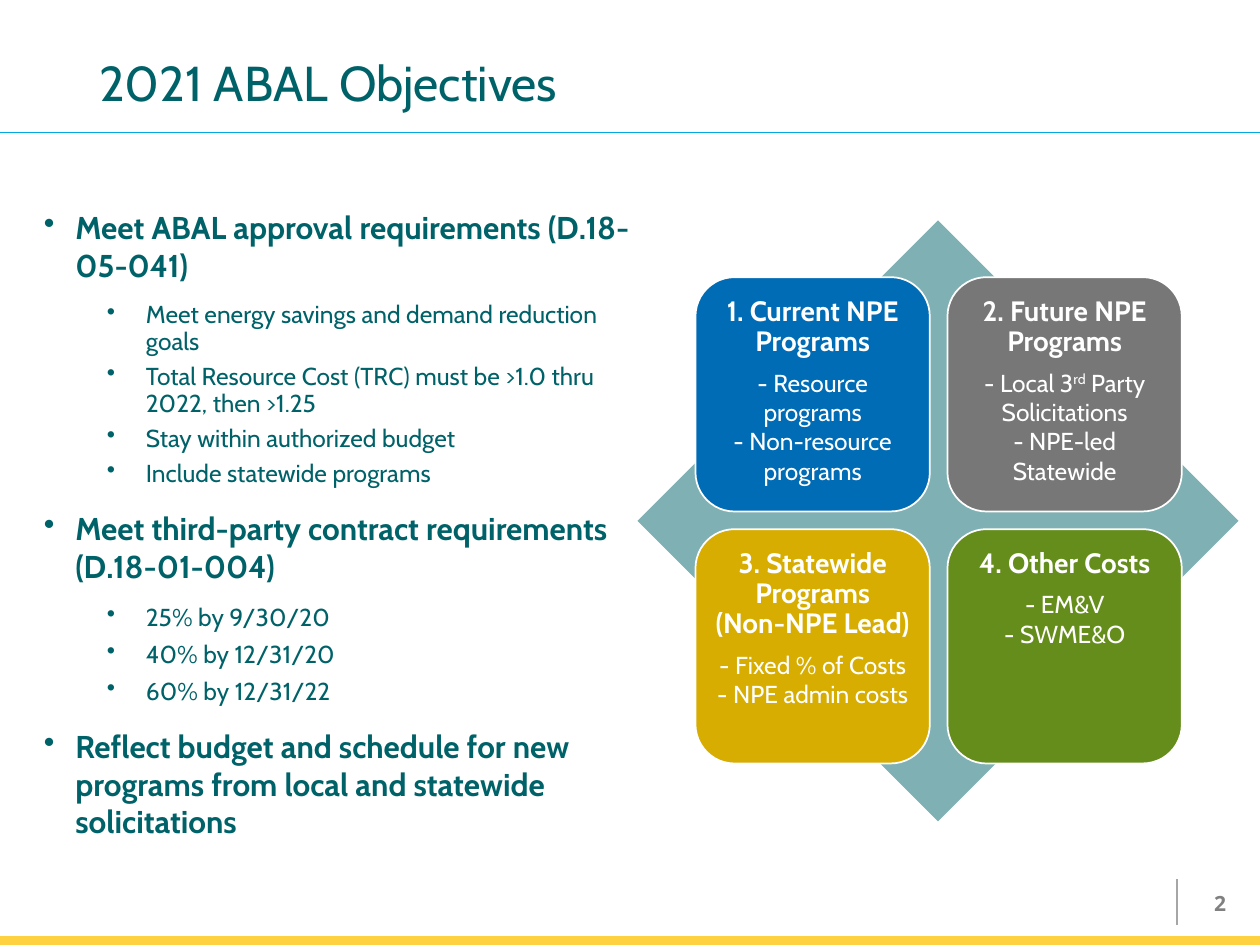
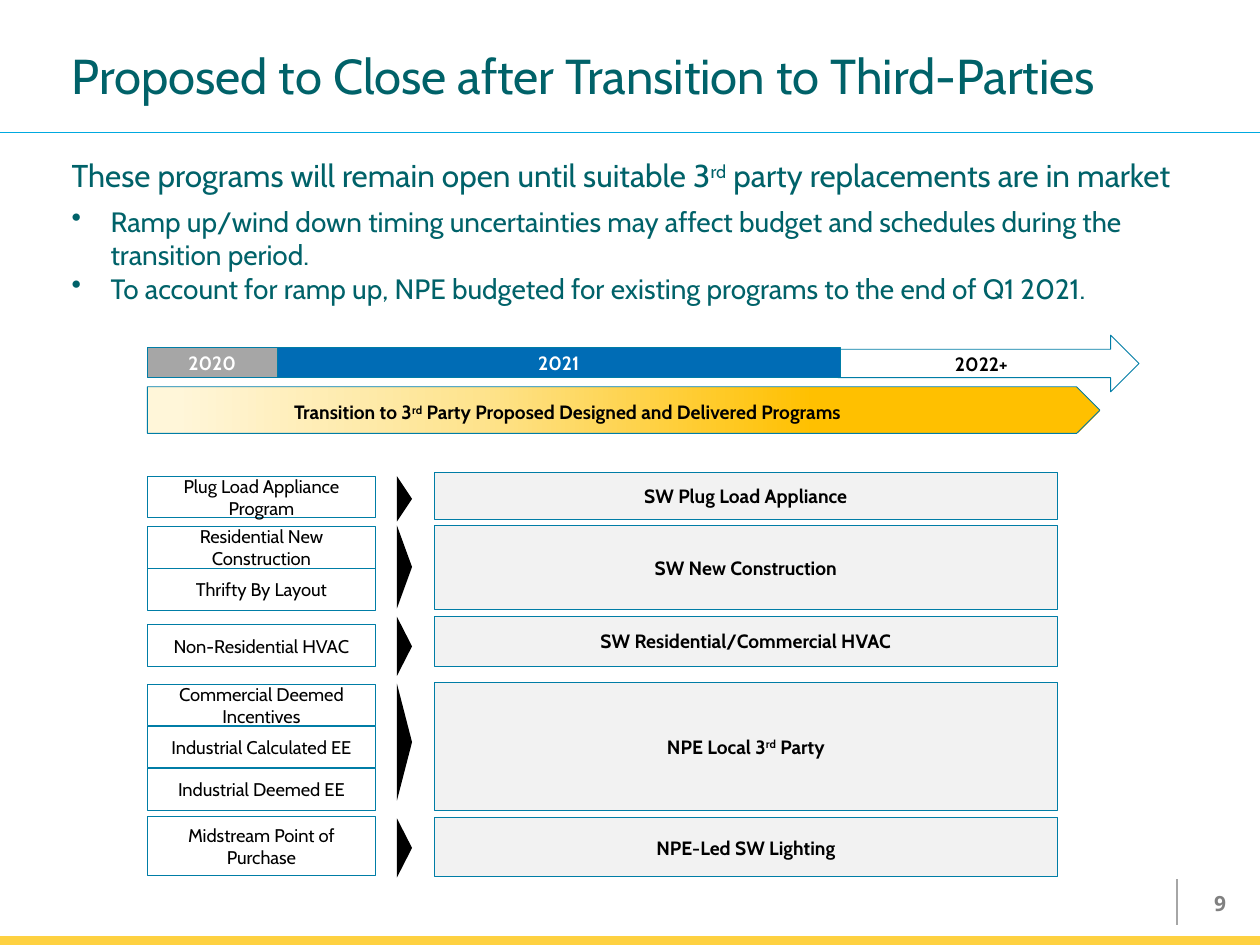
"""Build two slides on the 2021 ABAL objectives and the move to third-party programs."""
from dataclasses import dataclass, field

from lxml import etree
from pptx import Presentation
from pptx.dml.color import RGBColor
from pptx.enum.shapes import MSO_CONNECTOR, MSO_SHAPE
from pptx.enum.text import MSO_ANCHOR, PP_ALIGN
from pptx.oxml.ns import qn
from pptx.util import Inches, Pt

RECTANGLE = MSO_SHAPE.RECTANGLE
ROUNDED = MSO_SHAPE.ROUNDED_RECTANGLE
DIAMOND = MSO_SHAPE.DIAMOND
TRIANGLE = MSO_SHAPE.ISOSCELES_TRIANGLE
RIGHT_ARROW = MSO_SHAPE.RIGHT_ARROW
PENTAGON = MSO_SHAPE.PENTAGON
STRAIGHT = MSO_CONNECTOR.STRAIGHT
TOP, MIDDLE = MSO_ANCHOR.TOP, MSO_ANCHOR.MIDDLE
CENTER, RIGHT = PP_ALIGN.CENTER, PP_ALIGN.RIGHT


@dataclass(frozen=True)
class TextStyle:
    """Type and paragraph settings of one kind of text."""
    size: float
    color: str
    bold: bool = False
    font: str = "Cabin"
    layout: dict = field(default_factory=dict)
    indent: tuple = ()


@dataclass(frozen=True)
class Theme:
    """Colours and type styles of the presentation."""
    teal: str = "006269"
    blue: str = "006CB5"
    gray: str = "777777"
    mustard: str = "D6AD00"
    green: str = "658D1B"
    band: str = "FED141"
    title_rule: str = "00A9E0"
    page_rule: str = "A6A6A6"
    outline: str = "007DA6"
    panel: str = "F2F2F2"
    white: str = "FFFFFF"
    black: str = "000000"
    fade: tuple = ((3, "FFF6D9"), (35, "FEE38D"), (70, "FFC000"))
    title: TextStyle = TextStyle(28, "006269", layout={"line_spacing": 0.9})
    page: TextStyle = TextStyle(12, "808080", True, "Open Sans", {"alignment": RIGHT})
    goal: TextStyle = TextStyle(
        18, "006269", True, indent=(0.25, -0.25),
        layout={"space_before": Pt(12), "space_after": Pt(6)})
    detail: TextStyle = TextStyle(
        14, "006269", indent=(0.81, -0.31),
        layout={"line_spacing": 0.9, "space_before": Pt(5)})
    target: TextStyle = TextStyle(
        14, "006269", indent=(0.81, -0.31),
        layout={"line_spacing": 0.9, "space_before": Pt(6)})
    card_title: TextStyle = TextStyle(
        16, "FFFFFF", True,
        layout={"alignment": CENTER, "line_spacing": 0.9, "space_after": Pt(5.6)})
    card_item: TextStyle = TextStyle(14, "FFFFFF", layout={"alignment": CENTER})
    lead: TextStyle = TextStyle(18, "006269", layout={"space_after": Pt(6)})
    note: TextStyle = TextStyle(16, "006269", indent=(0.31, -0.31))
    program: TextStyle = TextStyle(10.5, "000000", layout={"alignment": CENTER})
    label: TextStyle = TextStyle(11, "000000", True, layout={"alignment": CENTER})
    year: TextStyle = TextStyle(11, "FFFFFF", True, layout={"alignment": CENTER})


THEME = Theme()

OBJECTIVES = [
    ("Meet ABAL approval requirements (D.18-05-041)", THEME.goal),
    ("Meet energy savings and demand reduction goals", THEME.detail),
    ("Total Resource Cost (TRC) must be >1.0 thru 2022, then >1.25", THEME.detail),
    ("Stay within authorized budget", THEME.detail),
    ("Include statewide programs", THEME.detail),
    ("Meet third-party contract requirements (D.18-01-004)", THEME.goal),
    ("25% by 9/30/20", THEME.target),
    ("40% by 12/31/20", THEME.target),
    ("60% by 12/31/22", THEME.target),
    ("Reflect budget and schedule for new programs from local and statewide "
     "solicitations", THEME.goal),
]
CARDS = [
    (THEME.blue, "1. Current NPE Programs",
     ["- Resource programs", "- Non-resource programs"]),
    (THEME.gray, "2. Future NPE Programs",
     ["- Local 3^rd^ Party Solicitations", "- NPE-led Statewide"]),
    (THEME.mustard, "3. Statewide Programs\n(Non-NPE Lead)",
     ["- Fixed % of Costs", "- NPE admin costs"]),
    (THEME.green, "4. Other Costs", ["- EM&V", "- SWME&O"]),
]
TRANSITION_NOTES = [
    ("These programs will remain open until suitable 3^rd^ party replacements "
     "are in market", THEME.lead),
    ("Ramp up/wind down timing uncertainties may affect budget and schedules "
     "during the transition period.", THEME.note),
    ("To account for ramp up, NPE budgeted for existing programs to the end of "
     "Q1 2021.", THEME.note),
]
TRANSITIONS = [
    ("SW Plug Load Appliance", (3.75, 0.37), (3.96, 0.36), (3.78, 0.33),
     ["Plug Load Appliance Program"]),
    ("SW New Construction", (4.17, 0.67), (4.5, 0.66), (4.18, 0.33),
     ["Residential New Construction", "Thrifty By Layout"]),
    ("SW Residential/Commercial HVAC", (4.89, 0.4), (5.13, 0.47), (4.96, 0.33),
     ["Non-Residential HVAC"]),
    ("NPE Local 3^rd^ Party", (5.42, 1.01), (5.89, 0.93), (5.43, 0.33),
     ["Commercial Deemed Incentives", "Industrial Calculated EE",
      "Industrial Deemed EE"]),
    ("NPE-Led SW Lighting", (6.49, 0.47), (6.73, 0.47), (6.48, 0.47),
     ["Midstream Point of Purchase"]),
]


def set_values(target, values):
    """Set every attribute named in a dict of format values."""
    for name, value in values.items():
        setattr(target, name, value)


def add_run(paragraph, text, style, raised):
    """Add one run in a style, raised when it is a superscript."""
    run = paragraph.add_run()
    run.text = text
    set_values(run.font, {"name": style.font, "size": Pt(style.size), "bold": style.bold})
    run.font.color.rgb = RGBColor.from_string(style.color)
    if raised:
        run.font._element.set("baseline", "30000")


def add_bullet(paragraph, indent):
    """Give a paragraph a round bullet with a hanging indent."""
    properties = paragraph._p.get_or_add_pPr()
    for name, value in zip(("marL", "indent"), indent):
        properties.set(name, str(Inches(value)))
    etree.SubElement(properties, qn("a:buChar"), char="•")


def write(shape, lines, anchor=MIDDLE, inset=None):
    """Fill a shape with styled paragraphs; carets enclose superscripts."""
    frame = shape.text_frame
    set_values(frame, {"word_wrap": True, "vertical_anchor": anchor})
    if inset is not None:
        sides = ("left", "top", "right", "bottom")
        set_values(frame, {f"margin_{side}": Inches(inset) for side in sides})
    for index, (text, style) in enumerate(lines):
        paragraph = frame.add_paragraph() if index else frame.paragraphs[0]
        if style.indent:
            add_bullet(paragraph, style.indent)
        set_values(paragraph, style.layout)
        if index == 0:
            paragraph.space_before = Pt(0)
        for row, line in enumerate(text.split("\n")):
            if row:
                paragraph.add_line_break()
            for part, piece in enumerate(line.split("^")):
                add_run(paragraph, piece, style, part % 2 == 1)


def add_text(slide, box, lines, anchor=TOP, inset=None):
    """Add a text box at left, top, width, height in inches."""
    write(slide.shapes.add_textbox(*map(Inches, box)), lines, anchor, inset)


def add_box(slide, kind, box, fill=None, line=None, width=0.5):
    """Add a flat preset shape."""
    shape = slide.shapes.add_shape(kind, *map(Inches, box))
    shape.shadow.inherit = False
    if fill:
        shape.fill.solid()
        shape.fill.fore_color.rgb = RGBColor.from_string(fill)
    else:
        shape.fill.background()
    if line:
        shape.line.color.rgb = RGBColor.from_string(line)
        shape.line.width = Pt(width)
    else:
        shape.line.fill.background()
    return shape


def add_label(slide, kind, box, text, style, fill=None):
    """Add an outlined shape with centred text."""
    write(add_box(slide, kind, box, fill, THEME.outline), [(text, style)])


def add_rule(slide, start, end, color, width):
    """Add a straight line without a shadow."""
    rule = slide.shapes.add_connector(STRAIGHT, *map(Inches, start + end))
    rule.line.color.rgb = RGBColor.from_string(color)
    rule.line.width = Pt(width)
    etree.SubElement(rule._element.spPr, qn("a:effectLst"))


def make_translucent(shape, percent):
    """Set the opacity of a solid fill."""
    color = shape._element.spPr.find(qn("a:solidFill"))[0]
    etree.SubElement(color, qn("a:alpha"), val=str(percent * 1000))


def fade_across(shape, stops):
    """Fill a shape with a left-to-right gradient."""
    shape.fill.gradient()
    shape.fill.gradient_angle = 0
    stop_list = shape._element.spPr.find(qn("a:gradFill")).find(qn("a:gsLst"))
    for stop in list(stop_list):
        stop_list.remove(stop)
    for position, color in stops:
        stop = etree.SubElement(stop_list, qn("a:gs"), pos=str(position * 1000))
        etree.SubElement(stop, qn("a:srgbClr"), val=color)


def add_base_slide(presentation, title, corner, number):
    """Add a blank slide with the shared rules, band, title and page number."""
    slide = presentation.slides.add_slide(presentation.slide_layouts[6])
    add_rule(slide, (9.34, 6.98), (9.34, 7.34), THEME.page_rule, 1)
    add_box(slide, RECTANGLE, (0, 7.43, 10, 0.07), THEME.band)
    add_rule(slide, (0, 1.05), (10, 1.05), THEME.title_rule, 0.5)
    add_text(slide, (*corner, 8.62, 0.56), [(title, THEME.title)], MIDDLE)
    add_text(slide, (9.27, 6.97, 0.56, 0.4), [(str(number), THEME.page)], MIDDLE)
    return slide


def add_cards(slide):
    """Add the two-by-two cards over a diamond."""
    diamond = add_box(slide, DIAMOND, (5.06, 1.75, 4.77, 4.77), THEME.teal)
    make_translucent(diamond, 50)
    side, pitch, edge = 1.86, 2.0, 0.09
    for index, (color, title, items) in enumerate(CARDS):
        row, column = divmod(index, 2)
        left, top = 5.52 + column * pitch, 2.2 + row * pitch
        add_box(slide, ROUNDED, (left, top, side, side), color, THEME.white, 1)
        lines = [(title, THEME.card_title)] + [(item, THEME.card_item) for item in items]
        inner = side - 2 * edge
        add_text(slide, (left + edge, top + edge, inner, inner), lines, inset=0.07)


def add_timeline(slide):
    """Add the year bar and the transition arrow below it."""
    add_label(slide, RIGHT_ARROW, (6.65, 2.66, 2.39, 0.45), "2022+", THEME.label, THEME.white)
    add_label(slide, RECTANGLE, (1.17, 2.76, 1.03, 0.24), "2020", THEME.year, THEME.page_rule)
    add_label(slide, RECTANGLE, (2.2, 2.76, 4.47, 0.24), "2021", THEME.year, THEME.blue)
    arrow = add_box(slide, PENTAGON, (1.17, 3.07, 7.56, 0.37), line=THEME.outline)
    fade_across(arrow, THEME.fade)
    caption = "Transition to 3^rd^ Party Proposed Designed and Delivered Programs"
    add_text(slide, (1.86, 3.13, 5.29, 0.29), [(caption, THEME.label)])


def add_transition(slide, outcome, panel, pointer, stack, programs):
    """Add stacked programs, a pointer and the program that replaces them."""
    top, height = stack
    for index, program in enumerate(programs):
        box = (1.17, top + index * 0.335, 1.81, height)
        add_label(slide, RECTANGLE, box, program, THEME.program)
    middle, length = pointer
    thickness = 0.12
    box = (3.21 - length / 2, middle - thickness / 2, length, thickness)
    add_box(slide, TRIANGLE, box, THEME.black).rotation = 90
    top, height = panel
    add_label(slide, RECTANGLE, (3.45, top, 4.94, height), outcome, THEME.label, THEME.panel)


def main():
    """Build and save the presentation."""
    presentation = Presentation()
    set_values(presentation, {"slide_width": Inches(10), "slide_height": Inches(7.5)})

    slide = add_base_slide(presentation, "2021 ABAL Objectives", (0.69, 0.4), 2)
    add_text(slide, (0.25, 1.6, 4.96, 5.12), OBJECTIVES)
    add_cards(slide)

    title = "Proposed to Close after Transition to Third-Parties"
    slide = add_base_slide(presentation, title, (0.47, 0.34), 9)
    add_text(slide, (0.47, 1.19, 9.26, 1.3), TRANSITION_NOTES)
    add_timeline(slide)
    for transition in TRANSITIONS:
        add_transition(slide, *transition)

    presentation.save("out.pptx")


if __name__ == "__main__":
    main()
